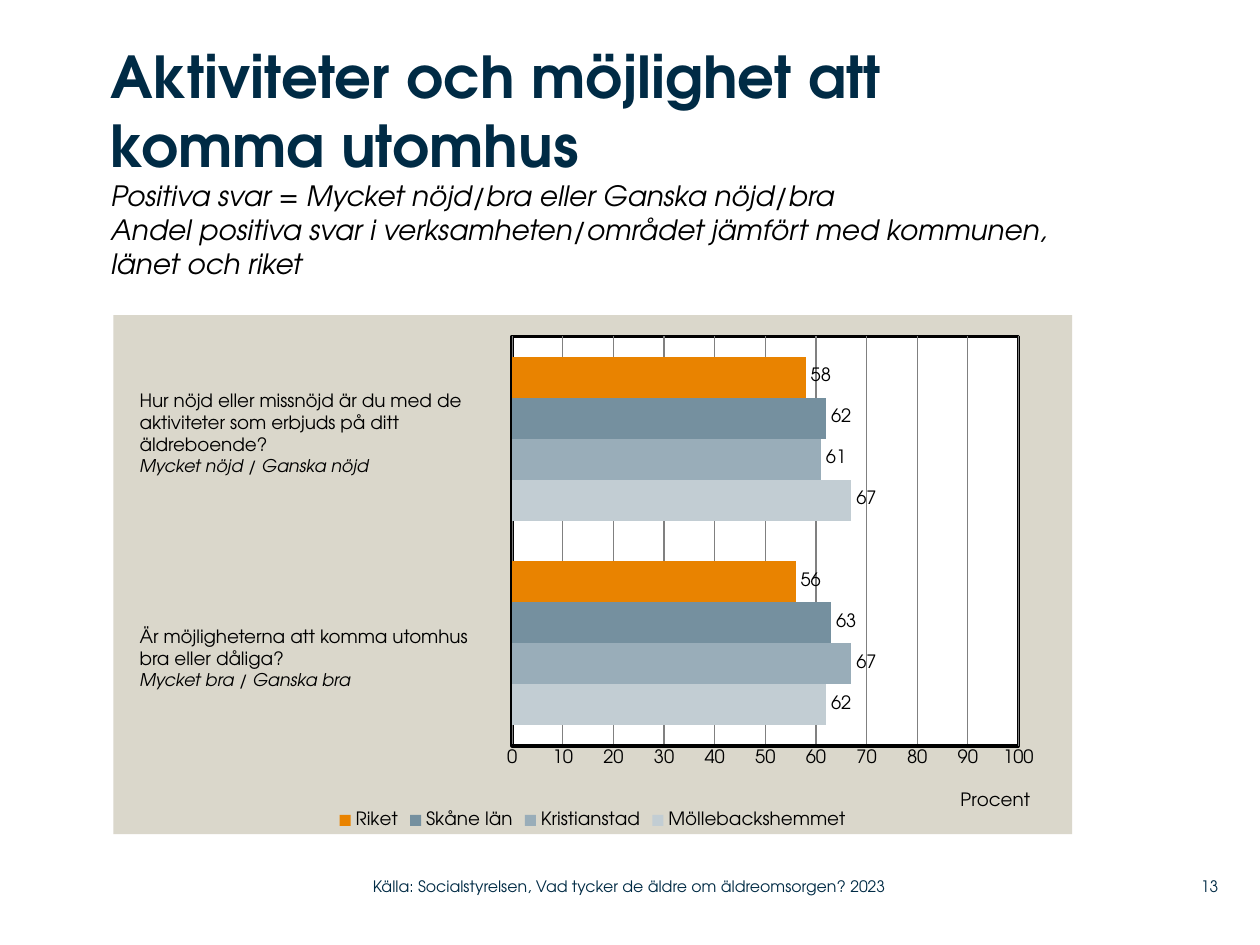
from dataclasses import dataclass

from lxml.etree import SubElement
from pptx import Presentation
from pptx.chart.data import CategoryChartData
from pptx.dml.color import RGBColor
from pptx.enum.chart import (XL_CHART_TYPE, XL_LABEL_POSITION,
                             XL_LEGEND_POSITION, XL_TICK_MARK)
from pptx.enum.text import MSO_ANCHOR, MSO_AUTO_SIZE, PP_ALIGN
from pptx.oxml import parse_xml
from pptx.oxml.ns import nsdecls, qn
from pptx.util import Inches, Pt


@dataclass(frozen=True)
class Theme:
    font: str = "TeX Gyre Adventor"
    navy: str = "002B45"
    text: str = "000000"
    panel: str = "DAD7CB"
    plot: str = "FFFFFF"
    grid: str = "808080"
    title: float = 33
    subtitle: float = 16
    body: float = 10.5
    answer: float = 10
    footer: float = 9


THEME = Theme()

SERIES = [
    ("Möllebackshemmet", (62, 67), "C2CDD3"),
    ("Kristianstad", (67, 61), "99ADB9"),
    ("Skåne län", (63, 62), "75909F"),
    ("Riket", (56, 58), "E98300"),
]


def rgb(value):
    return RGBColor.from_string(value)


def style(font, size, color=THEME.text, bold=False, italic=False):
    font.name = THEME.font
    font.size = Pt(size)
    font.bold = bold
    font.italic = italic
    font.color.rgb = rgb(color)


def place(sp, left, top, width, height):
    sp.left, sp.top = Inches(left), Inches(top)
    sp.width, sp.height = Inches(width), Inches(height)


def clear_margins(tf):
    tf.margin_left = tf.margin_top = tf.margin_right = tf.margin_bottom = 0


def add_title(s, heading, notes):
    sp = s.shapes.title
    place(sp, 0.88, 0.32, 7.8, 1.89)
    tf = sp.text_frame
    tf.word_wrap = True
    tf.auto_size = MSO_AUTO_SIZE.NONE
    tf.vertical_anchor = MSO_ANCHOR.TOP
    clear_margins(tf)
    p = tf.paragraphs[0]
    p.alignment = PP_ALIGN.LEFT
    r = p.add_run()
    r.text = heading
    style(r.font, THEME.title, THEME.navy, bold=True)
    for note in notes:
        p.add_line_break()
        r = p.add_run()
        r.text = note
        style(r.font, THEME.subtitle, italic=True)


def add_question(s, top, height, lines, answer):
    sp = s.shapes.add_textbox(Inches(1.01), Inches(top), Inches(3), Inches(height))
    tf = sp.text_frame
    tf.word_wrap = True
    tf.auto_size = MSO_AUTO_SIZE.SHAPE_TO_FIT_TEXT
    tf.text = "\n".join([*lines, answer])
    for p in tf.paragraphs:
        style(p.font, THEME.body)
    style(tf.paragraphs[-1].font, THEME.answer, italic=True)


def add_footer(s, left, width, text, align):
    sp = s.shapes.add_textbox(Inches(left), Inches(6.89), Inches(width), Inches(0.29))
    tf = sp.text_frame
    tf.word_wrap = True
    tf.vertical_anchor = MSO_ANCHOR.MIDDLE
    clear_margins(tf)
    p = tf.paragraphs[0]
    p.text = text
    p.alignment = align
    style(p.font, THEME.footer, THEME.navy)


def manual_layout(x, y, w=None, h=None):
    """Return a c:layout placed by fractions of the chart area."""
    layout = parse_xml(f"<c:layout {nsdecls('c')}><c:manualLayout/></c:layout>")
    values = [("xMode", "edge"), ("yMode", "edge"), ("x", x), ("y", y)]
    if w is not None:
        values = [("layoutTarget", "inner"), *values, ("w", w), ("h", h)]
    for name, value in values:
        SubElement(layout[0], qn(f"c:{name}")).set("val", str(value))
    return layout


def drop_layout(parent):
    for old in parent.findall(qn("c:layout")):
        parent.remove(old)


def area_fill(color, line):
    return parse_xml(
        f"<c:spPr {nsdecls('c', 'a')}><a:solidFill><a:srgbClr val=\"{color}\"/>"
        f"</a:solidFill>{line}</c:spPr>")


def format_areas(chart):
    """Fill the panel and the plot, and fix the place of the plot."""
    space = chart.element
    body = space.find(qn("c:chart"))
    body.addnext(area_fill(THEME.panel, "<a:ln><a:noFill/></a:ln>"))
    plot_area = body.find(qn("c:plotArea"))
    drop_layout(plot_area)
    plot_area.insert(0, manual_layout(0.416, 0.041, 0.528, 0.789))
    border = (f'<a:ln w="{Pt(2)}"><a:solidFill><a:srgbClr val="{THEME.text}"/>'
              "</a:solidFill></a:ln>")
    plot_area.append(area_fill(THEME.plot, border))


def format_value_axis(axis):
    axis.minimum_scale, axis.maximum_scale, axis.major_unit = 0, 100, 10
    axis.major_tick_mark = axis.minor_tick_mark = XL_TICK_MARK.NONE
    axis.format.line.color.rgb = rgb(THEME.text)
    axis.format.line.width = Pt(2)
    axis.has_major_gridlines = True
    grid = axis.major_gridlines.format.line
    grid.color.rgb = rgb(THEME.grid)
    grid.width = Pt(0.75)
    style(axis.tick_labels.font, THEME.body)
    p = axis.axis_title.text_frame.paragraphs[0]
    p.text = "Procent"
    style(p.font, THEME.body)
    title = axis.axis_title._element
    drop_layout(title)
    title.find(qn("c:tx")).addnext(manual_layout(0.88, 0.91))


def add_bar_chart(s):
    data = CategoryChartData(number_format="0")
    data.categories = ["1", "2"]
    for name, values, _ in SERIES:
        data.add_series(name, values)
    chart = s.shapes.add_chart(
        XL_CHART_TYPE.BAR_CLUSTERED, Inches(0.9), Inches(2.5),
        Inches(7.61), Inches(4.12), data).chart
    style(chart.font, THEME.body)
    chart.has_title = False
    chart.has_legend = True
    chart.legend.position = XL_LEGEND_POSITION.BOTTOM
    chart.legend.include_in_layout = False
    style(chart.legend.font, THEME.body)
    chart.category_axis.visible = False
    format_value_axis(chart.value_axis)

    plot = chart.plots[0]
    plot.gap_width = 100
    plot.overlap = 0
    plot.vary_by_categories = False
    for series, (_, _, color) in zip(plot.series, SERIES):
        series.format.fill.solid()
        series.format.fill.fore_color.rgb = rgb(color)
        labels = series.data_labels
        labels.show_value = True
        labels.position = XL_LABEL_POSITION.OUTSIDE_END
        style(labels.font, THEME.body)
    format_areas(chart)


def main():
    prs = Presentation()
    prs.slide_width, prs.slide_height = Inches(10), Inches(7.5)
    s = prs.slides.add_slide(prs.slide_layouts[5])
    add_bar_chart(s)
    add_title(s, "Aktiviteter och möjlighet att komma utomhus", [
        "Positiva svar = Mycket nöjd/bra eller Ganska nöjd/bra",
        "Andel positiva svar i verksamheten/området jämfört med kommunen, länet och riket"])
    add_question(s, 3.04, 0.98, [
        "Hur nöjd eller missnöjd är du med de aktiviteter som erbjuds på ditt äldreboende?"],
        "Mycket nöjd / Ganska nöjd")
    add_question(s, 4.91, 0.81, [
        "Är möjligheterna att komma utomhus", "bra eller dåliga?"],
        "Mycket bra / Ganska bra")
    add_footer(s, 9.2, 0.47, "13", PP_ALIGN.RIGHT)
    add_footer(s, 2.96, 4.43,
               "Källa: Socialstyrelsen, Vad tycker de äldre om äldreomsorgen? 2023",
               PP_ALIGN.LEFT)
    prs.save("out.pptx")


if __name__ == "__main__":
    main()
